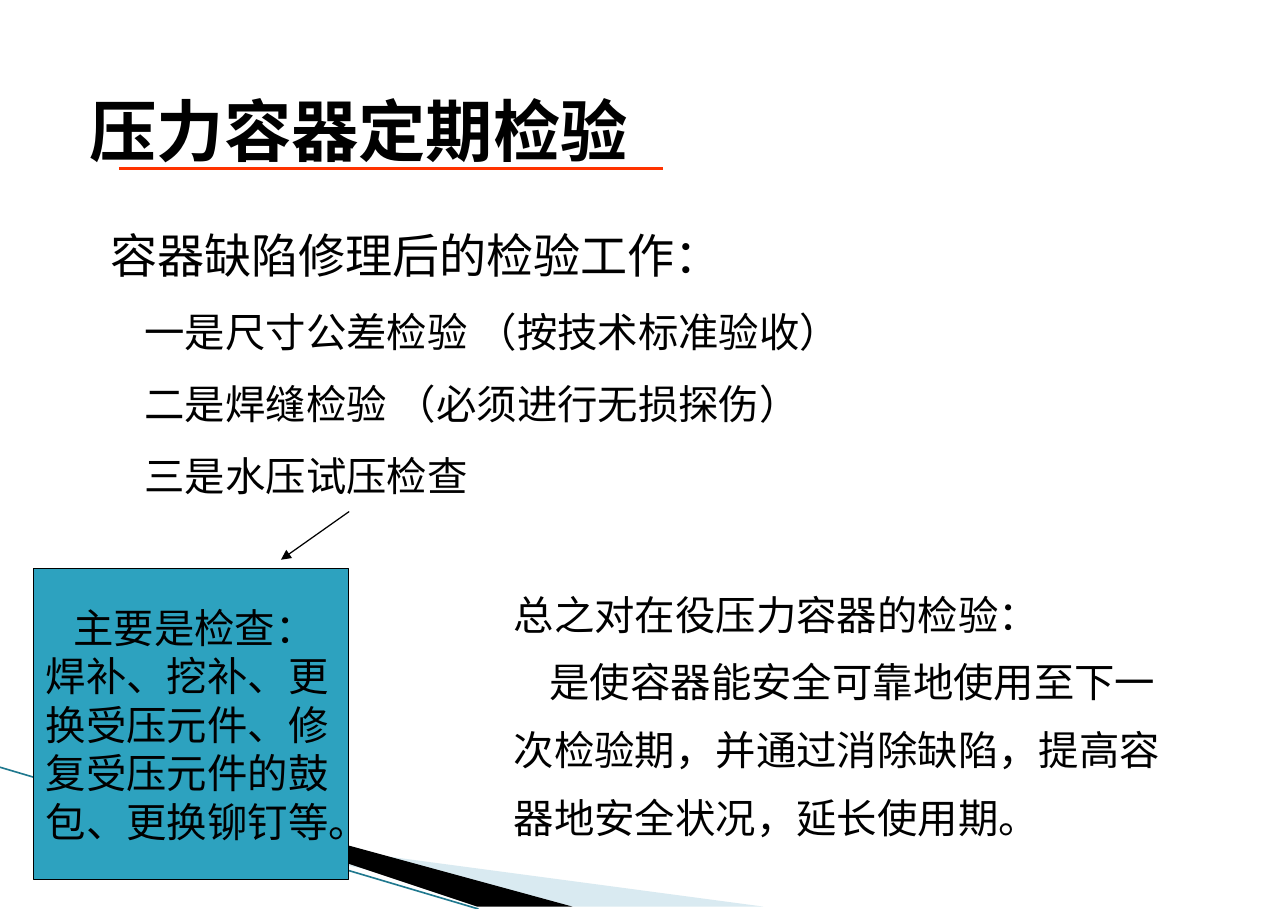
import pptx
import pptx.util
import pptx.dml.color
import pptx.enum.shapes
import pptx.enum.text
import pptx.oxml.ns
import lxml.etree

Cm = pptx.util.Cm
Pt = pptx.util.Pt
RGBColor = pptx.dml.color.RGBColor
qn = pptx.oxml.ns.qn

BLACK = RGBColor(0x00, 0x00, 0x00)
RED = RGBColor(0xFF, 0x33, 0x00)
TEAL = RGBColor(0x2D, 0xA2, 0xBF)
DARK_TEAL = RGBColor(0x1F, 0x78, 0x8E)
PALE_BLUE = RGBColor(0xA0, 0xCB, 0xDC)
CJK_FONT = "Noto Sans CJK SC"


def add_text(tf, text, size=24, font=CJK_FONT, bold=False, left=0, indent=0,
             spacing=None, before=0, first=False):
    p = tf.paragraphs[0] if first else tf.add_paragraph()
    p.alignment = pptx.enum.text.PP_ALIGN.LEFT
    p.space_before = Pt(before)
    if spacing:
        p.line_spacing = Pt(spacing)
    pPr = p._p.get_or_add_pPr()
    pPr.set("marL", str(Cm(left)))
    pPr.set("indent", str(Cm(indent)))
    r = p.add_run()
    r.text = text
    r.font.size = Pt(size)
    r.font.bold = bold
    r.font.name = font
    r.font.color.rgb = BLACK
    ea = lxml.etree.SubElement(r._r.get_or_add_rPr(), qn("a:ea"))
    ea.set("typeface", CJK_FONT)


def add_text_box(slide, x, y, w, h):
    tf = slide.shapes.add_textbox(Cm(x), Cm(y), Cm(w), Cm(h)).text_frame
    tf.word_wrap = True
    return tf


def add_line(slide, x1, y1, x2, y2, color, width, arrow=False):
    sp = slide.shapes.add_connector(
        pptx.enum.shapes.MSO_CONNECTOR.STRAIGHT, Cm(x1), Cm(y1), Cm(x2), Cm(y2))
    sp.line.color.rgb = color
    sp.line.width = Pt(width)
    if arrow:
        tail = lxml.etree.SubElement(sp.line._get_or_add_ln(), qn("a:tailEnd"))
        tail.set("type", "triangle")
    lxml.etree.SubElement(sp._element.spPr, qn("a:effectLst"))


def add_wedge(slide, points, color, opacity=100):
    builder = slide.shapes.build_freeform(*points[0], scale=Cm(1))
    builder.add_line_segments(points[1:])
    sp = builder.convert_to_shape()
    sp.shadow.inherit = False
    sp.line.fill.background()
    sp.fill.solid()
    sp.fill.fore_color.rgb = color
    if opacity < 100:
        clr = sp._element.spPr.find(qn("a:solidFill"))[0]
        alpha = lxml.etree.SubElement(clr, qn("a:alpha"))
        alpha.set("val", str(opacity * 1000))


def add_corner(slide):
    add_wedge(slide, [(1.47, 16.51), (16.05, 19.05), (12.32, 19.05)], PALE_BLUE, 40)
    add_wedge(slide, [(1.42, 16.48), (12.3, 19.05), (10.03, 19.05)], BLACK)
    add_line(slide, 0, 16.08, 10.03, 19.05, DARK_TEAL, 0.95)


def add_title(slide, text):
    sp = slide.shapes.title
    sp.left, sp.top, sp.width, sp.height = Cm(1.35), Cm(1.52), Cm(13.16), Cm(2.41)
    tf = sp.text_frame
    tf.auto_size = pptx.enum.text.MSO_AUTO_SIZE.NONE
    tf.vertical_anchor = pptx.enum.text.MSO_ANCHOR.MIDDLE
    tf.margin_left = Cm(0.53)
    add_text(tf, text, size=40, font="Courier New", bold=True, first=True)
    add_line(slide, 2.49, 3.53, 13.89, 3.53, RED, 2.25)


def add_repair_checks(slide):
    tf = add_text_box(slide, 1.35, 4.2, 24.31, 12.5)
    add_text(tf, "容器缺陷修理后的检验工作：", size=28, left=0.71, spacing=45.4, first=True)
    for item in ("一是尺寸公差检验 （按技术标准验收）",
                 "二是焊缝检验 （必须进行无损探伤）",
                 "三是水压试压检查"):
        add_text(tf, item, left=1.43, spacing=39, before=4)


def add_check_box(slide):
    sp = slide.shapes.add_shape(pptx.enum.shapes.MSO_SHAPE.RECTANGLE,
                                Cm(0.71), Cm(11.91), Cm(6.6), Cm(6.53))
    sp.shadow.inherit = False
    sp.fill.solid()
    sp.fill.fore_color.rgb = TEAL
    sp.line.color.rgb = BLACK
    sp.line.width = Pt(0.75)
    tf = sp.text_frame
    tf.word_wrap = False
    tf.vertical_anchor = pptx.enum.text.MSO_ANCHOR.MIDDLE
    add_text(tf, "主要是检查：", left=0.58, spacing=28.8, first=True)
    for text in ("焊补、挖补、更", "换受压元件、修", "复受压元件的鼓", "包、更换铆钉等。"):
        add_text(tf, text, spacing=28.8)


def add_summary(slide):
    tf = add_text_box(slide, 10.52, 11.83, 14.73, 5.94)
    add_text(tf, "总之对在役压力容器的检验：", spacing=40.3, first=True)
    add_text(tf, "是使容器能安全可靠地使用至下一次检验期，并通过消除缺陷，"
                 "提高容器地安全状况，延长使用期。", indent=0.75, spacing=40.3)


def main():
    prs = pptx.Presentation()
    prs.slide_width, prs.slide_height = Cm(27), Cm(19.05)
    slide = prs.slides.add_slide(prs.slide_layouts[5])
    add_corner(slide)
    add_repair_checks(slide)
    add_title(slide, "压力容器定期检验")
    add_check_box(slide)
    add_summary(slide)
    add_line(slide, 7.32, 10.72, 5.89, 11.73, BLACK, 0.75, arrow=True)
    prs.save("out.pptx")


if __name__ == "__main__":
    main()
